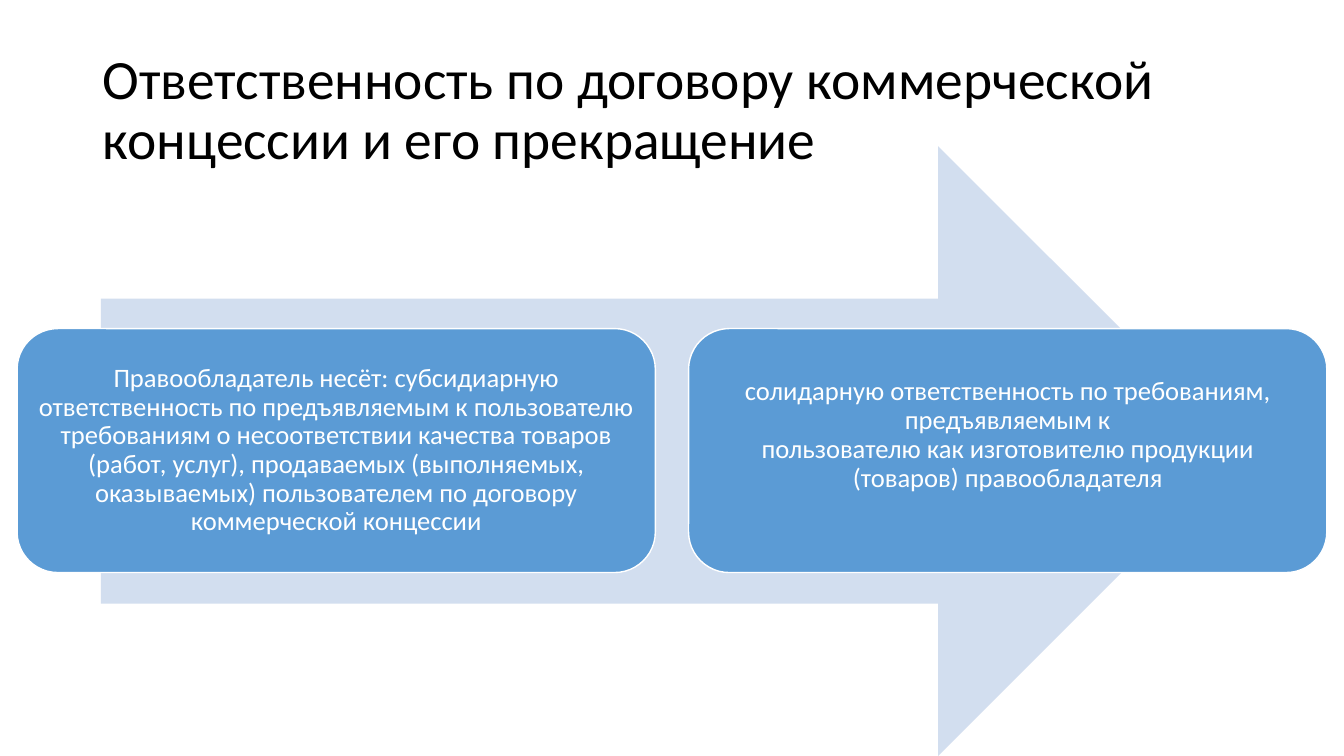
from dataclasses import dataclass

import pptx
import pptx.dml.color
import pptx.enum.shapes
import pptx.enum.text
import pptx.util

SLIDE_WIDTH = pptx.util.Inches(13.33)
SLIDE_HEIGHT = pptx.util.Inches(7.5)
COLORS = {"title": "000000", "arrow": "D2DEEF", "card": "5B9BD5", "light": "FFFFFF"}
MIDDLE = pptx.enum.text.MSO_ANCHOR.MIDDLE
CENTER = pptx.enum.text.PP_ALIGN.CENTER
LEFT = pptx.enum.text.PP_ALIGN.LEFT
SHAPES = pptx.enum.shapes.MSO_SHAPE

# Grid of the cards, in inches turned into shares of the slide
CARD_LEFT = 0.17 / 13.33
CARD_STEP = 6.66 / 13.33
CARD_WIDTH = 6.33 / 13.33
CARD_TOP = 3.26 / 7.5
CARD_HEIGHT = 2.42 / 7.5
CARD_INSET = pptx.util.Inches(0.08)


@dataclass
class Area:
    """A rectangle in shares of the slide's width and height."""
    left: float
    top: float
    width: float
    height: float

    def place(self) -> tuple[int, int, int, int]:
        return (round(self.left * SLIDE_WIDTH), round(self.top * SLIDE_HEIGHT),
                round(self.width * SLIDE_WIDTH), round(self.height * SLIDE_HEIGHT))


@dataclass
class Card:
    column: int
    lines: list[str]


TITLE_AREA = Area(0.92 / 13.33, 0.38 / 7.5, 11.5 / 13.33, 1.45 / 7.5)
ARROW_AREA = Area(1 / 13.33, 1.45 / 7.5, 11.33 / 13.33, 6.05 / 7.5)
TITLE = "Ответственность по договору коммерческой концессии и его прекращение"
# An empty last line keeps the second text slightly above the middle
CARDS = [
    Card(0, ["Правообладатель несёт: субсидиарную ответственность по предъявляемым к пользователю",
             "требованиям о несоответствии качества товаров (работ, услуг), продаваемых "
             "(выполняемых, оказываемых) пользователем по договору коммерческой концессии"]),
    Card(1, ["солидарную ответственность по требованиям, предъявляемым к",
             "пользователю как изготовителю продукции (товаров) правообладателя",
             ""]),
]


def rgb(name: str) -> pptx.dml.color.RGBColor:
    return pptx.dml.color.RGBColor.from_string(COLORS[name])


def apply_format(target, values: dict) -> None:
    for name, value in values.items():
        setattr(target, name, value)


def write_lines(box, lines: list[str], size: float, color: str, align) -> None:
    apply_format(box.text_frame, {"word_wrap": True, "vertical_anchor": MIDDLE})
    para = box.text_frame.paragraphs[0]
    apply_format(para, {"alignment": align, "line_spacing": 0.9})
    for index, line in enumerate(lines):
        if index:
            para.add_line_break()
        if line:
            span = para.add_run()
            apply_format(span, {"text": line})
            apply_format(span.font, {"name": "Calibri", "size": pptx.util.Pt(size)})
            span.font.color.rgb = rgb(color)


def add_filled_shape(page, kind, area: Area, color: str):
    box = page.shapes.add_shape(kind, *area.place())
    box.shadow.inherit = False
    box.fill.solid()
    box.fill.fore_color.rgb = rgb(color)
    box.line.fill.background()
    return box


def add_card(page, card: Card) -> None:
    area = Area(CARD_LEFT + card.column * CARD_STEP, CARD_TOP, CARD_WIDTH, CARD_HEIGHT)
    box = add_filled_shape(page, SHAPES.ROUNDED_RECTANGLE, area, "card")
    box.line.color.rgb = rgb("light")
    box.line.width = pptx.util.Pt(1)
    sides = ("left", "top", "right", "bottom")
    apply_format(box.text_frame, {f"margin_{side}": CARD_INSET for side in sides})
    write_lines(box, card.lines, 19, "light", CENTER)


def main() -> None:
    deck = pptx.Presentation()
    apply_format(deck, {"slide_width": SLIDE_WIDTH, "slide_height": SLIDE_HEIGHT})
    page = deck.slides.add_slide(deck.slide_layouts[6])

    # Title
    title = page.shapes.add_textbox(*TITLE_AREA.place())
    write_lines(title, [TITLE], 39.6, "title", LEFT)

    # Background arrow
    add_filled_shape(page, SHAPES.RIGHT_ARROW, ARROW_AREA, "arrow")

    # Cards on the arrow
    for card in CARDS:
        add_card(page, card)

    deck.save("out.pptx")


if __name__ == "__main__":
    main()
